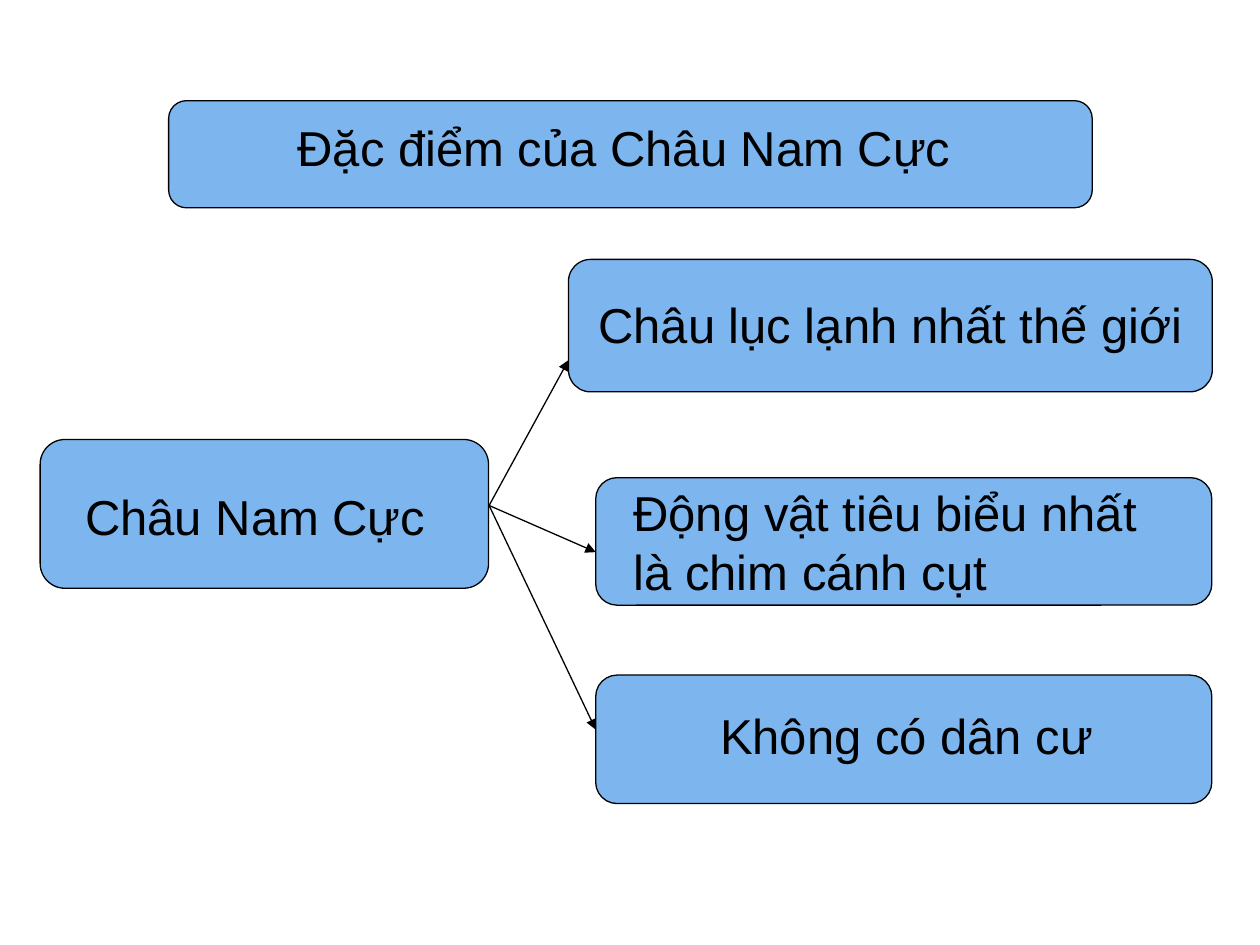
from dataclasses import dataclass

import pptx
import pptx.dml.color
import pptx.enum.shapes
import pptx.enum.text
import pptx.oxml.ns
import pptx.util
from lxml import etree
from pptx.dml.color import RGBColor
from pptx.shapes.connector import Connector
from pptx.slide import Slide
from pptx.util import Cm

SKY_BLUE = RGBColor(0x7D, 0xB6, 0xEF)
BLACK = RGBColor(0, 0, 0)
LINE_WIDTH = pptx.util.Pt(0.75)
CENTER = pptx.enum.text.PP_ALIGN.CENTER
LEFT = pptx.enum.text.PP_ALIGN.LEFT


@dataclass(frozen=True)
class Area:
    """A rectangle in centimetres."""
    left: float
    top: float
    width: float
    height: float

    def lengths(self) -> tuple[Cm, Cm, Cm, Cm]:
        return Cm(self.left), Cm(self.top), Cm(self.width), Cm(self.height)


@dataclass(frozen=True)
class Topic:
    label: str
    box: Area
    label_area: Area
    alignment: pptx.enum.text.PP_ALIGN = CENTER


@dataclass(frozen=True)
class Point:
    x: float
    y: float


LABEL_HEIGHT = 1.45
FACT_LEFT, FACT_WIDTH = 12.01, 12.42

TOPICS = [
    Topic("Châu Nam Cực ", Area(0.81, 8.86, 9.04, 3),
          Area(0.76, 9.68, 9.04, LABEL_HEIGHT)),
    Topic("Đặc điểm của Châu Nam Cực ", Area(3.4, 2.03, 18.62, 2.16),
          Area(4.5, 2.24, 16.43, LABEL_HEIGHT)),
    Topic("Châu lục lạnh nhất thế giới", Area(11.46, 5.23, 12.98, 2.67),
          Area(11.46, 5.82, 12.98, LABEL_HEIGHT)),
    Topic("Động vật tiêu biểu nhất là chim cánh cụt",
          Area(FACT_LEFT, 9.63, FACT_WIDTH, 2.57),
          Area(12.52, 9.6, 11.28, 2.62), LEFT),
    Topic("Không có dân cư", Area(FACT_LEFT, 13.61, FACT_WIDTH, 2.59),
          Area(12.75, 14.1, 11.05, LABEL_HEIGHT)),
]
BRANCH_START = Point(9.86, 10.19)
BRANCH_ENDS = [Point(11.46, 7.26), Point(FACT_LEFT, 11.13), Point(FACT_LEFT, 14.71)]


def draw_topic(slide: Slide, topic: Topic) -> None:
    box = slide.shapes.add_shape(
        pptx.enum.shapes.MSO_SHAPE.ROUNDED_RECTANGLE, *topic.box.lengths())
    box.shadow.inherit = False
    box.fill.solid()
    box.fill.fore_color.rgb = SKY_BLUE
    box.line.color.rgb = BLACK
    box.line.width = LINE_WIDTH

    label = slide.shapes.add_textbox(*topic.label_area.lengths()).text_frame
    label.word_wrap = True
    label.auto_size = pptx.enum.text.MSO_AUTO_SIZE.SHAPE_TO_FIT_TEXT
    label.text = topic.label
    paragraph = label.paragraphs[0]
    paragraph.alignment = topic.alignment
    font = paragraph.runs[0].font
    font.name = "Arial"
    font.size = pptx.util.Pt(28)
    font.color.rgb = BLACK


def add_arrowhead(arrow: Connector) -> None:
    etree.SubElement(arrow.line._get_or_add_ln(),
                     pptx.oxml.ns.qn("a:tailEnd"), type="triangle")


def draw_branch(slide: Slide, start: Point, end: Point) -> None:
    branch = slide.shapes.add_connector(
        pptx.enum.shapes.MSO_CONNECTOR.STRAIGHT,
        Cm(start.x), Cm(start.y), Cm(end.x), Cm(end.y))
    branch.line.color.rgb = BLACK
    branch.line.width = LINE_WIDTH
    add_arrowhead(branch)
    etree.SubElement(branch._element.spPr, pptx.oxml.ns.qn("a:effectLst"))


def main() -> None:
    presentation = pptx.Presentation()
    presentation.slide_width = Cm(25.4)
    presentation.slide_height = Cm(19.05)
    slide = presentation.slides.add_slide(presentation.slide_layouts[6])
    for topic in TOPICS:
        draw_topic(slide, topic)
    for end in BRANCH_ENDS:
        draw_branch(slide, BRANCH_START, end)
    presentation.save("out.pptx")


if __name__ == "__main__":
    main()
